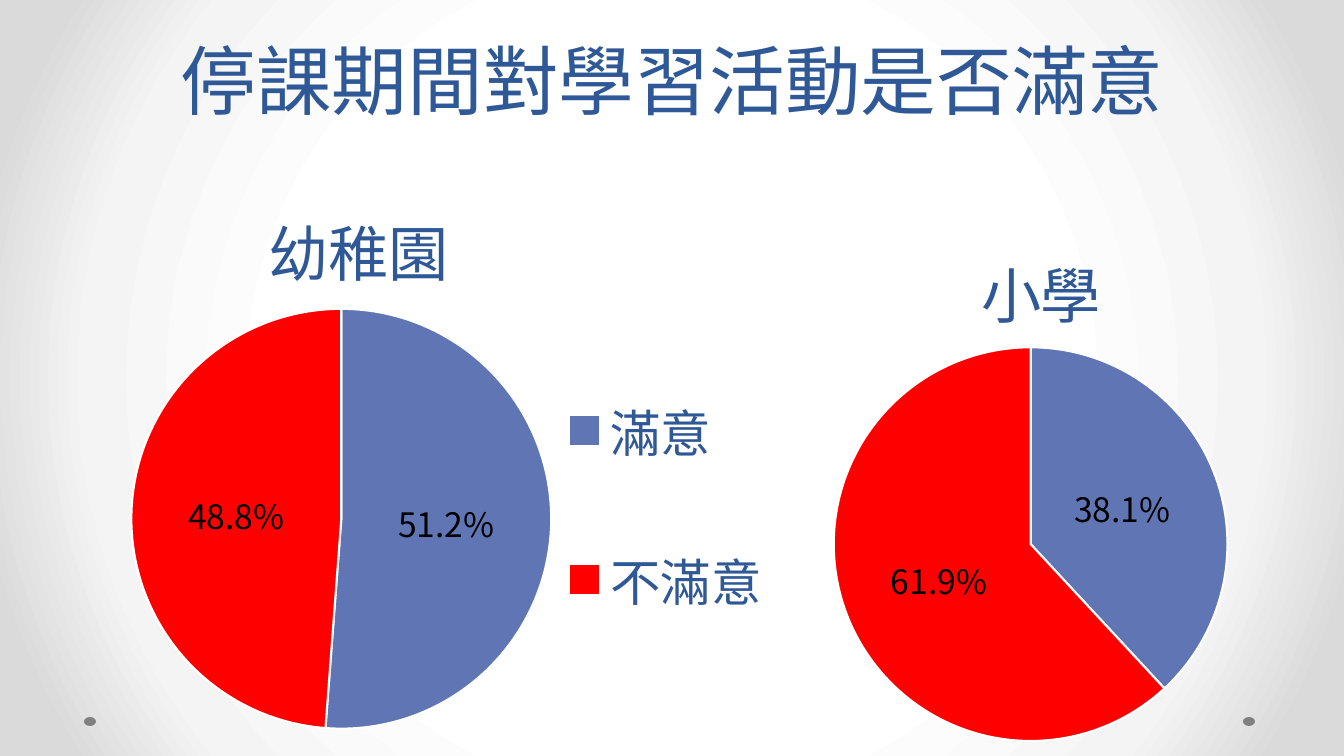
from lxml import etree
from pptx import Presentation
from pptx import util as u
from pptx.chart.data import CategoryChartData
from pptx.dml.color import RGBColor
from pptx.enum import chart as ch, shapes, text
from pptx.oxml import parse_xml
from pptx.oxml.ns import nsdecls, qn

# Content; frames are left, top, width, height in px
HEADING = "停課期間對學習活動是否滿意"
HEADING_FRAME = (0, -40, 1344, 170)
SCHOOLS = [
    dict(name="幼稚園", answers=("滿意", "不滿意"), shares=(0.512, 0.488),
         frame=(-65, 166, 850, 590), pie=(131, 309, 420, 420),
         name_at=(258, 189), legend=(560, 318, 215, 374)),
    dict(name="小學", answers=("1", "2"), shares=(0.381, 0.619),
         frame=(718, 192, 626, 564), pie=(834, 347, 394, 394),
         name_at=(970, 231), legend=None),
]
DOTS = [(1243, 717, 12, 9), (84, 717, 12, 9)]

# Look
PX = 914400 / 100.8
NAVY = RGBColor(0x2F, 0x58, 0x97)
BLUE = RGBColor(0x60, 0x76, 0xB4)
RED = RGBColor(0xFF, 0x00, 0x00)
WHITE = RGBColor(0xFF, 0xFF, 0xFF)
BLACK = RGBColor(0x00, 0x00, 0x00)
GREY = RGBColor(0x80, 0x80, 0x80)
BACKDROP = [(50, WHITE), (76, RGBColor(0xF4, 0xF4, 0xF4)), (92, RGBColor(0xDA, 0xDA, 0xDA))]
HEADING_FONT = dict(name="Vollkorn", size=u.Pt(54), bold=False)
SCHOOL_FONT = dict(name="Vollkorn", size=u.Pt(43), bold=False)
ANSWER_FONT = dict(name="Vollkorn", size=u.Pt(36), bold=False)
SHARE_FONT = dict(name="Noto Sans CJK SC", size=u.Pt(24), bold=False)


def emu(frame):
    return [u.Emu(round(v * PX)) for v in frame]


def style(font, look, color):
    for key, value in look.items():
        setattr(font, key, value)
    font.color.rgb = color


def place(part, frame, within, inner=False):
    """Give a chart part a manual layout, as fractions of the chart frame."""
    left, top, width, height = within
    x, y, *size = frame
    values = [("xMode", "edge"), ("yMode", "edge"),
              ("x", round((x - left) / width, 3)), ("y", round((y - top) / height, 3))]
    values += [(k, round(v / full, 3)) for k, v, full in zip("wh", size, (width, height))]
    if inner:
        values.insert(0, ("layoutTarget", "inner"))
    for old in part.findall(qn("c:layout")):
        part.remove(old)
    layout = parse_xml(f"<c:layout {nsdecls('c')}/>")
    manual = etree.SubElement(layout, qn("c:manualLayout"))
    for key, value in values:
        etree.SubElement(manual, qn("c:" + key)).set("val", str(value))
    before = part.find(qn("c:tx"))
    if before is None:
        before = part.find(qn("c:legendPos"))
    if before is None:
        part.insert(0, layout)
    else:
        before.addnext(layout)


def paint_background(slide):
    fill = slide.background.fill
    fill.gradient()
    stops = "".join(f'<a:gs pos="{at * 1000}"><a:srgbClr val="{color}"/></a:gs>'
                    for at, color in BACKDROP)
    gradient = parse_xml(
        f'<a:gradFill {nsdecls("a")} rotWithShape="1"><a:gsLst>{stops}</a:gsLst>'
        '<a:path path="circle"><a:fillToRect l="50000" t="50000" r="50000" b="50000"/>'
        '</a:path></a:gradFill>')
    old = next(slide._element.iter(qn("a:gradFill")))
    old.getparent().replace(old, gradient)


def add_school(slide, school):
    data = CategoryChartData(number_format="0.0%")
    data.categories = school["answers"]
    data.add_series("Series 1", school["shares"])
    frame = school["frame"]
    chart = slide.shapes.add_chart(ch.XL_CHART_TYPE.PIE, *emu(frame), data).chart
    style(chart.font, ANSWER_FONT, NAVY)

    # School name
    chart.has_title = True
    name = chart.chart_title.text_frame
    name.text = school["name"]
    style(name.paragraphs[0].runs[0].font, SCHOOL_FONT, NAVY)
    place(chart.chart_title._element, school["name_at"], frame)

    # Pie slices and shares
    plot = chart.plots[0]
    plot.vary_by_categories = True
    for i, color in enumerate((BLUE, RED)):
        form = plot.series[0].points[i].format
        form.fill.solid()
        form.fill.fore_color.rgb = color
        form.line.color.rgb = WHITE
        form.line.width = u.Pt(1.5)
    plot.has_data_labels = True
    labels = plot.data_labels
    for key, value in dict(show_value=True, show_percentage=False, number_format="0.0%",
                           number_format_is_linked=False,
                           position=ch.XL_LABEL_POSITION.CENTER).items():
        setattr(labels, key, value)
    style(labels.font, SHARE_FONT, BLACK)
    place(next(chart._chartSpace.iter(qn("c:plotArea"))), school["pie"], frame, inner=True)

    # Answers
    chart.has_legend = school["legend"] is not None
    if chart.has_legend:
        chart.legend.position = ch.XL_LEGEND_POSITION.RIGHT
        chart.legend.include_in_layout = False
        style(chart.legend.font, ANSWER_FONT, NAVY)
        place(chart.legend._element, school["legend"], frame)


def main():
    deck = Presentation()
    deck.slide_width, deck.slide_height = emu((1344, 756))
    slide = deck.slides.add_slide(deck.slide_layouts[5])
    paint_background(slide)

    # Corner dots
    for frame in DOTS:
        dot = slide.shapes.add_shape(shapes.MSO_SHAPE.OVAL, *emu(frame))
        dot.shadow.inherit = False
        dot.fill.solid()
        dot.fill.fore_color.rgb = GREY
        dot.line.fill.background()

    # Heading
    heading = slide.shapes.title
    heading.left, heading.top, heading.width, heading.height = emu(HEADING_FRAME)
    heading.text_frame.text = HEADING
    heading.text_frame.vertical_anchor = text.MSO_ANCHOR.BOTTOM
    line = heading.text_frame.paragraphs[0]
    line.alignment = text.PP_ALIGN.CENTER
    line.line_spacing = u.Pt(58)
    style(line.runs[0].font, HEADING_FONT, NAVY)

    for school in SCHOOLS:
        add_school(slide, school)
    deck.save("out.pptx")


if __name__ == "__main__":
    main()
